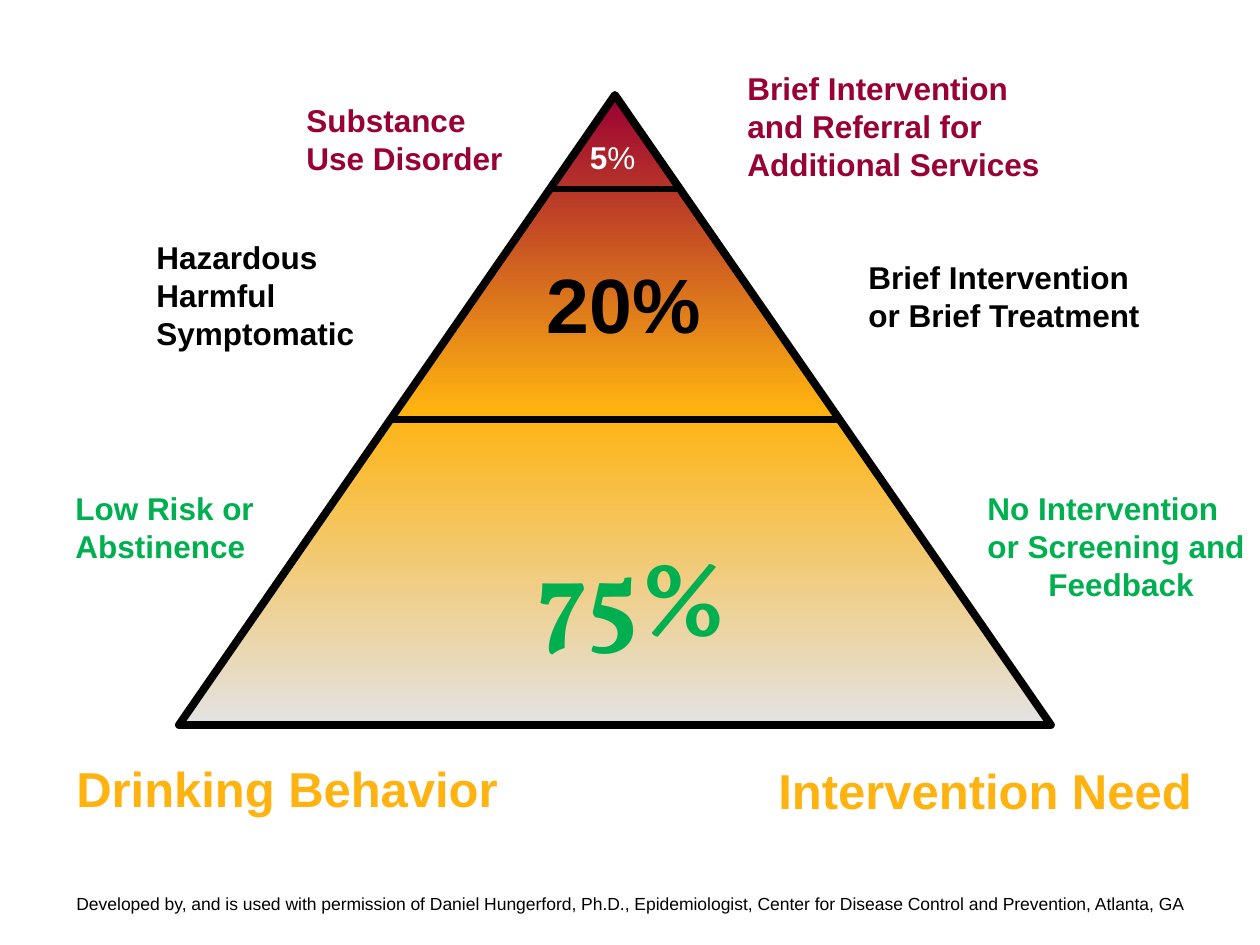
from copy import deepcopy
from dataclasses import dataclass

from lxml.etree import SubElement
from pptx import Presentation
from pptx.dml.color import RGBColor
from pptx.enum.shapes import MSO_CONNECTOR, MSO_SHAPE
from pptx.enum.text import MSO_ANCHOR, PP_ALIGN
from pptx.oxml.ns import qn
from pptx.util import Emu, Pt

PX_PER_INCH = 126
SLIDE_W, SLIDE_H = 1260, 945


@dataclass(frozen=True)
class Theme:
    severe: str = "990033"
    amber: str = "FFB310"
    pale: str = "E3E3E3"
    healthy: str = "00B050"
    ink: str = "000000"
    white: str = "FFFFFF"
    font: str = "Arial"
    serif: str = "Vollkorn"
    credit: int = 10
    label: int = 18
    heading: int = 28
    share: int = 44
    largest_share: int = 60


THEME = Theme()


def px(length):
    return Emu(round(length * 914400 / PX_PER_INCH))


def rgb(colour):
    return RGBColor.from_string(colour)


def add_text(slide, paragraphs, box, *, size=THEME.label, colour=THEME.ink,
             font=THEME.font, bold=True, align=PP_ALIGN.LEFT,
             anchor=MSO_ANCHOR.TOP, last_indent=0):
    """Each paragraph is a string or a list of (text, bold) runs."""
    frame = slide.shapes.add_textbox(*map(px, box)).text_frame
    frame.word_wrap = True
    frame.vertical_anchor = anchor
    for index, content in enumerate(paragraphs):
        paragraph = frame.paragraphs[0] if index == 0 else frame.add_paragraph()
        paragraph.alignment = align
        runs = [(content, bold)] if isinstance(content, str) else content
        for text, run_bold in runs:
            run = paragraph.add_run()
            run.text = text
            run.font.name = font
            run.font.size = Pt(size)
            run.font.bold = run_bold
            run.font.color.rgb = rgb(colour)
    if last_indent:
        paragraph._p.get_or_add_pPr().set("marL", str(px(last_indent)))


def fill_downward(shape, colours):
    """Spread the colours evenly from top to bottom."""
    fill = shape.fill
    fill.gradient()
    fill.gradient_angle = 270
    stop_list = shape._element.spPr.find(".//" + qn("a:gsLst"))
    while len(stop_list) < len(colours):
        stop_list.append(deepcopy(stop_list[-1]))
    for index, (stop, colour) in enumerate(zip(fill.gradient_stops, colours)):
        stop.position = index / (len(colours) - 1)
        stop.color.rgb = rgb(colour)


def add_divider(slide, box, depth, weight):
    """Cross the triangle at a depth below its apex, edge to edge."""
    left, top, width, height = box
    centre, overhang = left + width / 2, 2
    reach = width / 2 * depth / height + overhang
    divider = slide.shapes.add_connector(
        MSO_CONNECTOR.STRAIGHT, px(centre - reach), px(top + depth),
        px(centre + reach), px(top + depth))
    divider.line.color.rgb = rgb(THEME.ink)
    divider.line.width = Pt(weight)
    SubElement(divider._element.spPr, qn("a:effectLst"))


def add_pyramid(slide, box):
    left, top, _, _ = box
    triangle = slide.shapes.add_shape(MSO_SHAPE.FLOWCHART_EXTRACT, *map(px, box))
    triangle.shadow.inherit = False
    fill_downward(triangle, (THEME.severe, THEME.amber, THEME.pale))
    triangle.line.color.rgb = rgb(THEME.ink)
    triangle.line.width = Pt(4.5)
    SubElement(triangle.line._get_or_add_ln(), qn("a:round"))
    add_divider(slide, box, 94, 3)
    add_divider(slide, box, 325, 4)

    add_text(slide, [[("5", True), ("%", False)]], (left + 356, top + 37, 155, 50),
             colour=THEME.white, align=PP_ALIGN.CENTER)
    add_text(slide, ["20%"], (left + 340, top + 155, 210, 105),
             size=THEME.share, align=PP_ALIGN.CENTER)
    add_text(slide, ["75%"], (left + 346, top + 430, 368, 140),
             size=THEME.largest_share, font=THEME.serif, colour=THEME.healthy)


def add_tier_labels(slide, box, tiers):
    left, top, _, _ = box
    for paragraphs, (dx, dy, width, height), colour, last_indent in tiers:
        add_text(slide, paragraphs, (left + dx, top + dy, width, height),
                 colour=colour, last_indent=last_indent)


def add_headings(slide, box):
    left, top, width, height = box
    add_text(slide, ["Drinking Behavior"], (left, top, 478, height),
             size=THEME.heading, colour=THEME.amber, align=PP_ALIGN.CENTER)
    add_text(slide, ["Intervention Need"], (left + width - 462, top + 2, 462, height),
             size=THEME.heading, colour=THEME.amber)


def add_credit(slide, box):
    add_text(slide, ["Developed by, and is used with permission of Daniel Hungerford, "
                     "Ph.D., Epidemiologist, Center for Disease Control and Prevention, "
                     "Atlanta, GA"],
             box, size=THEME.credit, bold=False, align=PP_ALIGN.CENTER,
             anchor=MSO_ANCHOR.MIDDLE)


BEHAVIORS = [
    (["Substance Use Disorder"], (231, 32, 231, 89), THEME.severe, 0),
    (["Hazardous Harmful Symptomatic"], (81, 169, 284, 127), THEME.ink, 0),
    (["Low Risk or", "Abstinence"], (0, 420, 210, 127), THEME.healthy, 0),
]
NEEDS = [
    (["Brief Intervention and Referral for Additional Services"],
     (0, 0, 350, 127), THEME.severe, 0),
    (["Brief Intervention or Brief Treatment"], (121, 189, 302, 89), THEME.ink, 0),
    (["No Intervention or Screening and", "Feedback"],
     (240, 420, 284, 127), THEME.healthy, 61),
]


def main():
    deck = Presentation()
    deck.slide_width, deck.slide_height = px(SLIDE_W), px(SLIDE_H)
    slide = deck.slides.add_slide(deck.slide_layouts[6])
    add_pyramid(slide, (179, 95, 872, 630))
    add_tier_labels(slide, (63, 63, 462, 547), BEHAVIORS)
    add_tier_labels(slide, (735, 63, 524, 547), NEEDS)
    add_headings(slide, (48, 752, 1180, 72))
    add_credit(slide, (0, 886, SLIDE_W, 34))
    deck.save("out.pptx")


if __name__ == "__main__":
    main()
